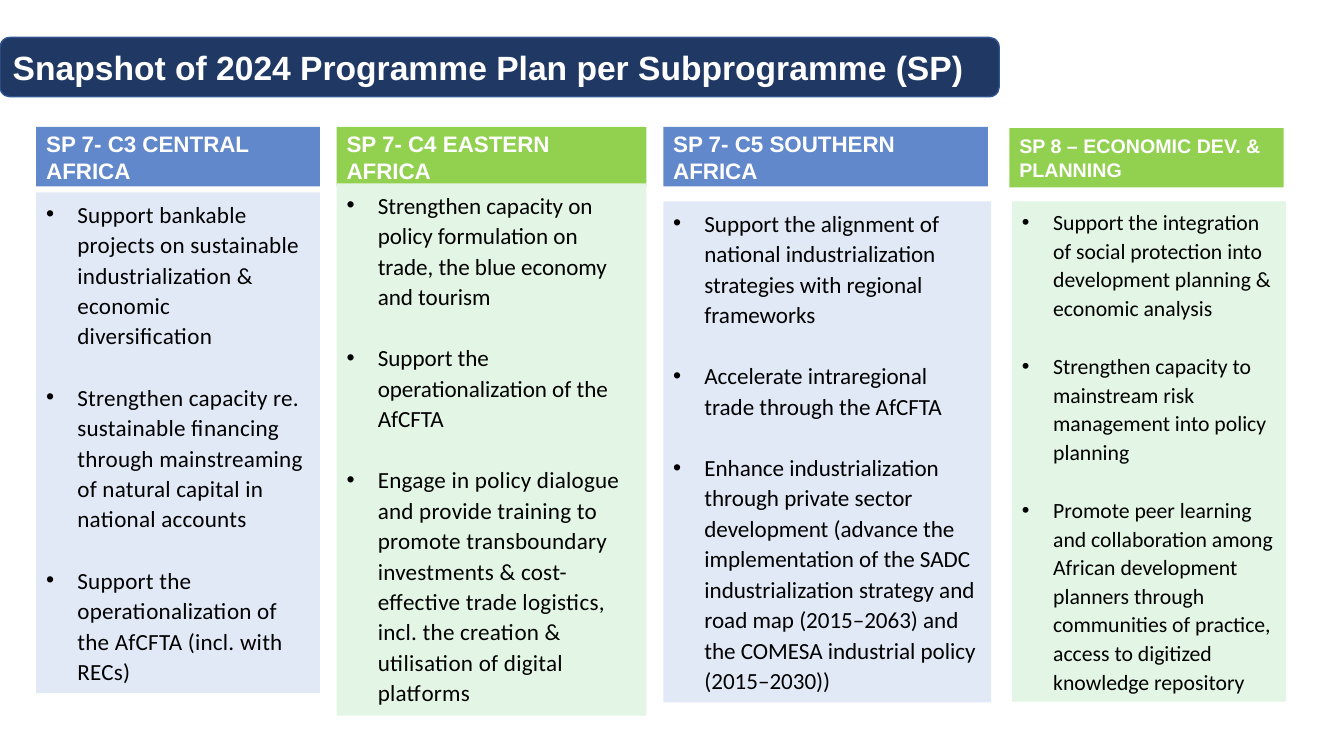
from dataclasses import dataclass

from lxml.etree import SubElement
from pptx import Presentation
from pptx.dml.color import RGBColor
from pptx.enum.shapes import MSO_SHAPE
from pptx.enum.text import MSO_ANCHOR, PP_ALIGN
from pptx.oxml.ns import qn
from pptx.util import Inches, Pt


@dataclass(frozen=True)
class Theme:
    navy: str = "203864"
    navy_edge: str = "325491"
    blue: str = "6288CC"
    pale_blue: str = "E2E9F6"
    green: str = "92D050"
    pale_green: str = "E3F5E5"
    white: str = "FFFFFF"
    black: str = "000000"
    heading_font: str = "Arial"
    body_font: str = "Calibri"
    title_size: float = 24
    header_size: float = 16
    small_header_size: float = 14
    body_size: float = 16.5
    small_body_size: float = 15.5
    line_spacing: float = 1.1
    gap_ratio: float = 1.33
    indent: float = 0.31
    tracking: int = 20


@dataclass(frozen=True)
class Subprogramme:
    heading: str
    header_area: tuple
    panel_area: tuple
    header_fill: str
    panel_fill: str
    header_size: float
    body_size: float
    tracked_from: int
    actions: tuple


class SnapshotSlide:
    def __init__(self, deck, theme):
        self.theme = theme
        self.width = deck.slide_width
        self.height = deck.slide_height
        self.slide = deck.slides.add_slide(deck.slide_layouts[6])

    def block(self, area, fill, kind=MSO_SHAPE.RECTANGLE, edge=None):
        left, top, width, height = area
        block = self.slide.shapes.add_shape(
            kind,
            round(self.width * left / 100),
            round(self.height * top / 100),
            round(self.width * width / 100),
            round(self.height * height / 100),
        )
        block.shadow.inherit = False
        block.fill.solid()
        block.fill.fore_color.rgb = RGBColor.from_string(fill)
        if edge:
            block.line.color.rgb = RGBColor.from_string(edge)
            block.line.width = Pt(1)
        else:
            block.line.fill.background()
        block.text_frame.word_wrap = True
        return block

    def style_runs(self, paragraph, font, size, color, bold=False):
        paragraph.alignment = PP_ALIGN.LEFT
        for run in paragraph.runs:
            run.font.name = font
            run.font.size = Pt(size)
            run.font.bold = bold
            run.font.color.rgb = RGBColor.from_string(color)

    def heading(self, text, area, fill, size, **outline):
        frame = self.block(area, fill, **outline).text_frame
        frame.vertical_anchor = MSO_ANCHOR.MIDDLE
        frame.text = text
        self.style_runs(frame.paragraphs[0], self.theme.heading_font, size, self.theme.white, True)

    def bullet(self, paragraph):
        properties = paragraph._p.get_or_add_pPr()
        indent = Inches(self.theme.indent)
        properties.set("marL", str(indent))
        properties.set("indent", str(-indent))
        SubElement(properties, qn("a:buFont"), typeface=self.theme.heading_font)
        SubElement(properties, qn("a:buChar"), char="•")

    def action_panel(self, area, fill, size, actions, tracked_from):
        frame = self.block(area, fill).text_frame
        frame.vertical_anchor = MSO_ANCHOR.TOP
        for index, action in enumerate(actions):
            paragraph = frame.add_paragraph() if index else frame.paragraphs[0]
            paragraph.text = action
            self.bullet(paragraph)
            paragraph.line_spacing = self.theme.line_spacing
            if index:
                paragraph.space_before = Pt(round(size * self.theme.gap_ratio))
            self.style_runs(paragraph, self.theme.body_font, size, self.theme.black)
            if index >= tracked_from:
                for run in paragraph.runs:
                    run.font._element.set("spc", str(self.theme.tracking))

    def subprogramme(self, plan):
        self.heading(plan.heading, plan.header_area, plan.header_fill, plan.header_size)
        self.action_panel(
            plan.panel_area, plan.panel_fill, plan.body_size, plan.actions, plan.tracked_from
        )


THEME = Theme()

SUBPROGRAMMES = (
    Subprogramme(
        "SP 7- C3 CENTRAL AFRICA",
        (2.7, 16.8, 21.1, 7.85), (2.7, 25.45, 21.1, 66.25),
        THEME.blue, THEME.pale_blue, THEME.header_size, THEME.body_size, 0,
        (
            "Support bankable projects on sustainable industrialization & economic diversification",
            "Strengthen capacity re. sustainable financing through mainstreaming of natural "
            "capital in national accounts",
            "Support the operationalization of the AfCFTA (incl. with RECs)",
        ),
    ),
    Subprogramme(
        "SP 7- C4 EASTERN AFRICA",
        (25.05, 16.8, 23.05, 7.85), (25.05, 24.25, 23.05, 70.4),
        THEME.green, THEME.pale_green, THEME.header_size, THEME.body_size, 2,
        (
            "Strengthen capacity on policy formulation on trade, the blue economy and tourism",
            "Support the operationalization of the AfCFTA",
            "Engage in policy dialogue and provide training to promote transboundary "
            "investments & cost-effective trade logistics, incl. the creation & utilisation "
            "of digital platforms",
        ),
    ),
    Subprogramme(
        "SP 7- C5 SOUTHERN AFRICA",
        (49.35, 16.8, 24.15, 7.85), (49.35, 26.65, 24.4, 66.25),
        THEME.blue, THEME.pale_blue, THEME.header_size, THEME.body_size, 3,
        (
            "Support the alignment of national industrialization strategies with regional "
            "frameworks",
            "Accelerate intraregional trade through the AfCFTA",
            "Enhance industrialization through private sector development (advance the "
            "implementation of the SADC industrialization strategy and road map (2015–2063) "
            "and the COMESA industrial policy (2015–2030))",
        ),
    ),
    Subprogramme(
        "SP 8 – ECONOMIC DEV. & PLANNING",
        (75.1, 16.95, 20.4, 7.85), (75.3, 26.65, 20.4, 66.15),
        THEME.green, THEME.pale_green, THEME.small_header_size, THEME.small_body_size, 3,
        (
            "Support the integration of social protection into development planning & "
            "economic analysis",
            "Strengthen capacity to mainstream risk management into policy planning",
            "Promote peer learning and collaboration among African development planners "
            "through communities of practice, access to digitized knowledge repository",
        ),
    ),
)


def main():
    deck = Presentation()
    deck.slide_width = Inches(13.33)
    deck.slide_height = Inches(7.5)
    snapshot = SnapshotSlide(deck, THEME)
    snapshot.heading(
        "Snapshot of 2024 Programme Plan per Subprogramme (SP)",
        (0, 4.95, 74.35, 7.85), THEME.navy, THEME.title_size,
        kind=MSO_SHAPE.ROUNDED_RECTANGLE, edge=THEME.navy_edge,
    )
    for plan in SUBPROGRAMMES:
        snapshot.subprogramme(plan)
    deck.save("out.pptx")


if __name__ == "__main__":
    main()
